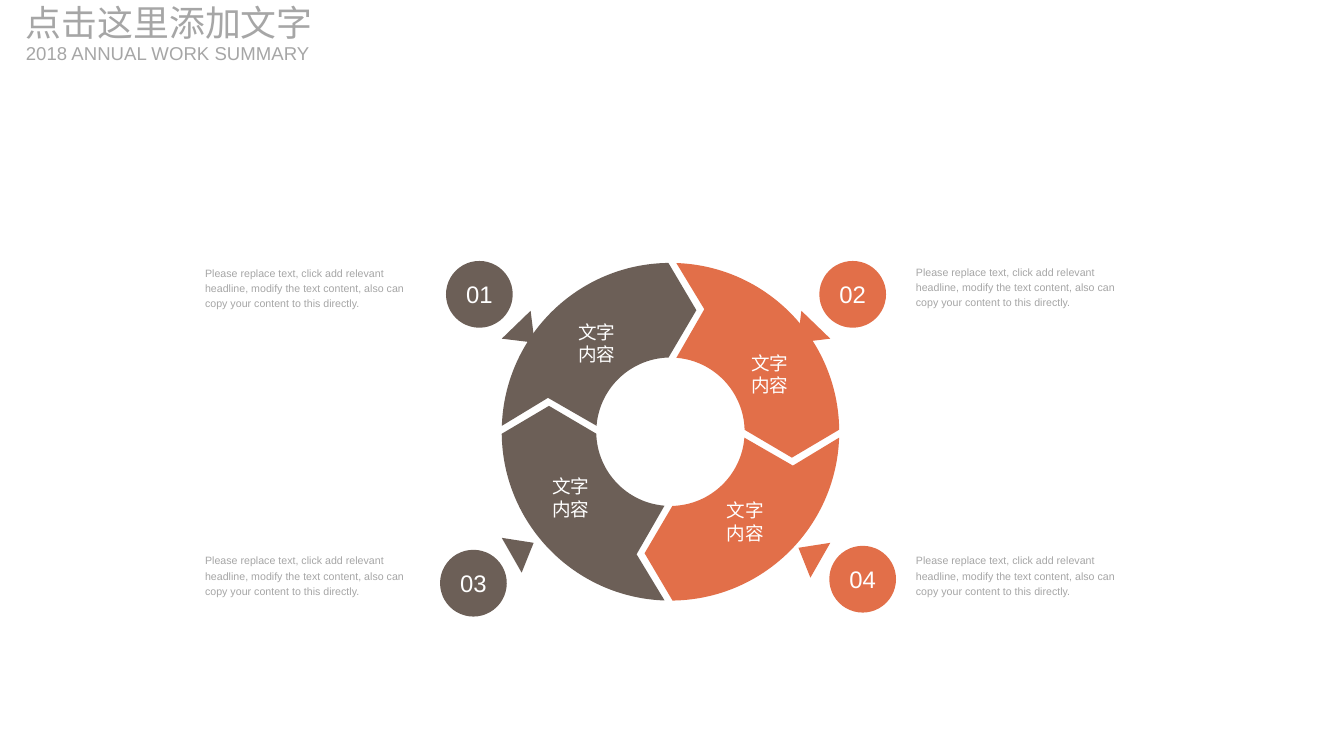
import math

import lxml.etree
import pptx
import pptx.dml.color
import pptx.enum.shapes
import pptx.enum.text
import pptx.oxml.ns
import pptx.util

PX = 9525
BROWN, ORANGE, GREY, WHITE = "6C5F57", "E26F49", "A6A6A6", "FFFFFF"
LATIN, CHINESE = "Arial", "Noto Sans CJK SC"
LEFT = pptx.enum.text.PP_ALIGN.LEFT
CENTER = pptx.enum.text.PP_ALIGN.CENTER
TOP = pptx.enum.text.MSO_ANCHOR.TOP
MIDDLE = pptx.enum.text.MSO_ANCHOR.MIDDLE
OVAL = pptx.enum.shapes.MSO_SHAPE.OVAL

BODY = ("Please replace text, click add relevant headline, modify the text content, "
        "also can copy your content to this directly.")
CIRCLE_SIZE = 67
UPPER_POINTER = [(4, 50), (33, 78), (0, 82)]
LOWER_POINTER = [(33, 0), (13, 35), (1, 5)]
CALLOUTS = [
    {"number": "04", "box": (801, 545, 340, 67), "right": True, "circle": (32, 3),
     "body": (221, 9), "pointer": LOWER_POINTER},
    {"number": "03", "box": (206, 540, 331, 79), "right": False, "circle": (28, 12),
     "body": (216, 14), "pointer": LOWER_POINTER},
    {"number": "02", "box": (801, 262, 340, 82), "right": True, "circle": (22, 0),
     "body": (221, 2), "pointer": UPPER_POINTER},
    {"number": "01", "box": (206, 262, 331, 82), "right": False, "circle": (22, 0),
     "body": (216, 3), "pointer": UPPER_POINTER},
]
SEGMENTS = [
    {"colour": BROWN, "label": (69, 44)},
    {"colour": ORANGE, "label": (243, 75)},
    {"colour": ORANGE, "label": (218, 223)},
    {"colour": BROWN, "label": (43, 199)},
]
ARC_ENDS = (3, 8)


def px(length):
    return pptx.util.Emu(round(length * PX))


def colour(hex_string):
    return pptx.dml.color.RGBColor.from_string(hex_string)


def apply(target, values):
    for name, value in values.items():
        setattr(target, name, value)


def paint(shape, hex_string):
    shape.shadow.inherit = False
    shape.fill.solid()
    shape.fill.fore_color.rgb = colour(hex_string)
    shape.line.fill.background()


def write(shape, text, size, hex_string, font=LATIN, align=LEFT, anchor=TOP, spacing=1.0):
    frame = shape.text_frame
    apply(frame, {"word_wrap": True, "auto_size": pptx.enum.text.MSO_AUTO_SIZE.NONE,
                  "vertical_anchor": anchor, "margin_left": 0, "margin_right": 0,
                  "margin_top": 0, "margin_bottom": 0})
    para = frame.paragraphs[0]
    apply(para, {"alignment": align, "line_spacing": spacing,
                 "space_before": pptx.util.Pt(0)})
    span = para.add_run()
    span.text = text
    apply(span.font, {"size": pptx.util.Pt(size), "name": font})
    span.font.color.rgb = colour(hex_string)
    east_asian = lxml.etree.SubElement(span.font._element, pptx.oxml.ns.qn("a:ea"))
    east_asian.set("typeface", CHINESE)


def add_text(page, box, text, size, hex_string, **style):
    shape = page.shapes.add_textbox(*map(px, box))
    write(shape, text, size, hex_string, **style)


def add_outline(page, points, hex_string):
    corners = [(px(x), px(y)) for x, y in points]
    builder = page.shapes.build_freeform(*corners[0])
    builder.add_line_segments(corners[1:], close=True)
    shape = builder.convert_to_shape()
    paint(shape, hex_string)
    return shape


def bend(shape, arc_ends):
    lines = list(shape._element.iter(pptx.oxml.ns.qn("a:lnTo")))
    for end in arc_ends:
        curve = lxml.etree.Element(pptx.oxml.ns.qn("a:cubicBezTo"))
        lines[end].addnext(curve)
        for line in lines[end - 2:end + 1]:
            curve.append(line[0])
            line.getparent().remove(line)


def arc(radius, start, end):
    first, last = math.radians(start), math.radians(end)
    reach = 4 / 3 * math.tan((last - first) / 4)

    def at(angle, pull):
        return (radius * (math.cos(angle) - pull * math.sin(angle)),
                radius * (math.sin(angle) + pull * math.cos(angle)))

    return [at(first, 0), at(first, reach), at(last, -reach), at(last, 0)]


def add_heading(page, box):
    left, top, width, height = box
    title, subtitle = page.placeholders
    for holder, offset, tall in ((title, 0, 45), (subtitle, 42, height - 42)):
        apply(holder, {"left": px(left), "top": px(top + offset),
                       "width": px(width), "height": px(tall)})
    write(title, "点击这里添加文字", 27, GREY, font=CHINESE, anchor=MIDDLE)
    write(subtitle, "2018 ANNUAL WORK SUMMARY", 14, GREY, anchor=MIDDLE)


def add_callout(page, box, number, right, circle, body, pointer):
    left, top, width, height = box
    hex_string = ORANGE if right else BROWN

    def outward(distance, span=0):
        return left + distance if right else left + width - distance - span

    distance, drop = circle
    disc = page.shapes.add_shape(OVAL, px(outward(distance, CIRCLE_SIZE)), px(top + drop),
                                 px(CIRCLE_SIZE), px(CIRCLE_SIZE))
    paint(disc, hex_string)
    write(disc, number, 18, WHITE, align=CENTER, anchor=MIDDLE)

    add_outline(page, [(outward(x), top + y) for x, y in pointer], hex_string)

    body_width, drop = body
    add_text(page, (outward(width - body_width, body_width), top + drop, body_width, 45),
             BODY, 8, GREY, spacing=1.2)


def add_ring(page, box):
    left, top, width, height = box
    middle_x, middle_y = left + width / 2, top + height / 2
    outline = [(26, -122), *arc(169.5, 269.3, 182), (-123, -34), *arc(74.5, 184.6, 268.5)]
    for segment in SEGMENTS:
        shape = add_outline(page, [(middle_x + x, middle_y + y) for x, y in outline],
                            segment["colour"])
        bend(shape, ARC_ENDS)
        outline = [(-y, x) for x, y in outline]
    for segment in SEGMENTS:
        x, y = segment["label"]
        add_text(page, (left + x, top + y, 53, 71), "文字内容", 14, WHITE,
                 align=CENTER, anchor=MIDDLE)


def main():
    deck = pptx.Presentation()
    apply(deck, {"slide_width": px(1350), "slide_height": px(759)})
    page = deck.slides.add_slide(deck.slide_layouts[0])
    add_heading(page, (26, 0, 415, 65))
    for callout in CALLOUTS:
        add_callout(page, **callout)
    add_ring(page, (504, 265, 339, 337))
    deck.save("out.pptx")


if __name__ == "__main__":
    main()
